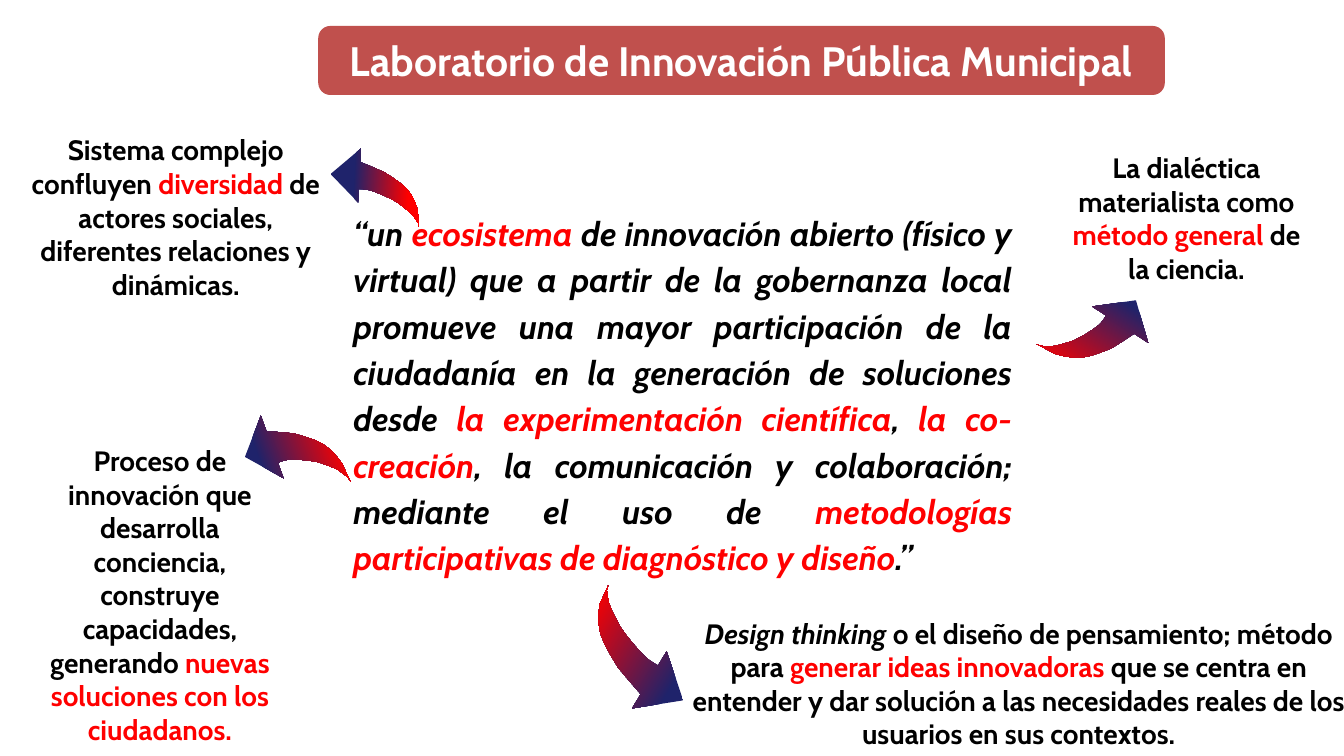
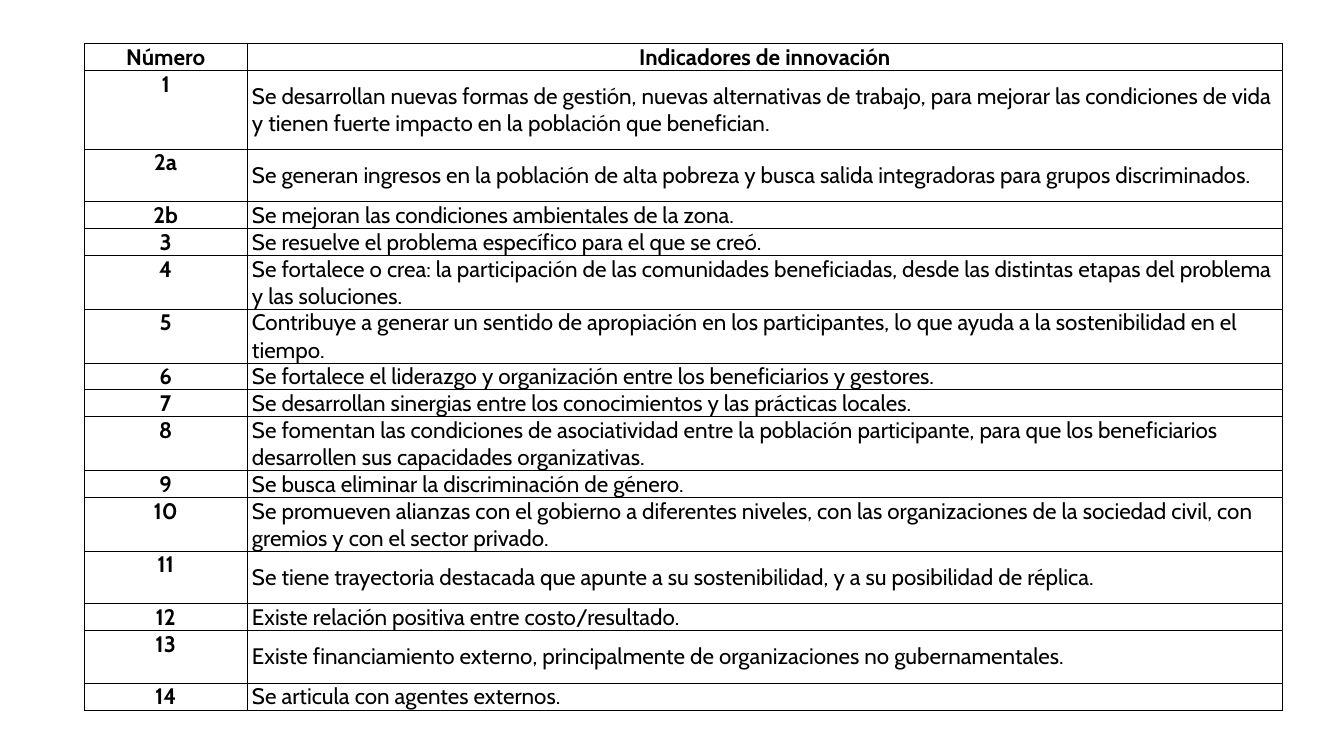
from dataclasses import dataclass

from lxml.etree import SubElement
from pptx import Presentation
from pptx.dml.color import RGBColor as RGB
from pptx.enum.shapes import MSO_SHAPE as Preset
from pptx.enum.text import MSO_ANCHOR as Anchor, MSO_AUTO_SIZE as Fit, PP_ALIGN as Align
from pptx.oxml.ns import qn
from pptx.util import Inches, Pt

COLUMNS, ROWS = 20, 11.25


@dataclass(frozen=True)
class Theme:
    font: str = "Cabin"
    ink: str = "000000"
    accent: str = "FF0000"
    paper: str = "FFFFFF"
    banner: str = "C0504D"
    arrow_head: str = "1F236B"
    title_size: int = 44
    quote_size: int = 36
    note_size: int = 30
    table_size: int = 24


@dataclass(frozen=True)
class Words:
    """A stretch of text with one style."""
    text: str
    accent: bool = False
    italic: bool = False


# Outline of the curved arrow in percent of its box: tail at the top left, tip at the right
SWOOSH = [
    (0, 0), (1, 11), (2, 22), (5, 31), (9, 40), (15, 49), (22, 56), (31, 63), (41, 70), (54, 76),
    (68, 82), (68, 100), (100, 64), (68, 28), (68, 46),
    (61, 46), (55, 45), (47, 42), (40, 39), (32, 35), (25, 31), (19, 26), (13, 21), (8, 16),
    (4, 10), (1, 5),
]


class Deck:
    """Holds the style and the current slide; boxes are (column, row, columns, rows)."""

    def __init__(self, theme):
        self.theme = theme
        self.show = Presentation()
        self.show.slide_width, self.show.slide_height = Inches(20), Inches(11.25)
        self.column = self.show.slide_width / COLUMNS
        self.row = self.show.slide_height / ROWS
        self.slide = None

    def new_slide(self):
        self.slide = self.show.slides.add_slide(self.show.slide_layouts[6])
        backdrop = self.slide.background.fill
        backdrop.solid()
        backdrop.fore_color.rgb = RGB.from_string(self.theme.paper)

    def place(self, box):
        left, top, width, height = box
        return (round(left * self.column), round(top * self.row),
                round(width * self.column), round(height * self.row))

    def add_words(self, frame, words, size, align, color=None, bold=True, italic=False):
        paragraph = frame.paragraphs[0]
        paragraph.alignment = align
        for part in words:
            run = paragraph.add_run()
            run.text = part.text
            font = run.font
            font.name, font.size, font.bold = self.theme.font, Pt(size), bold
            font.italic = italic or part.italic
            plain = color or self.theme.ink
            font.color.rgb = RGB.from_string(self.theme.accent if part.accent else plain)
        return paragraph

    def banner(self, box, title):
        band = self.slide.shapes.add_shape(Preset.ROUNDED_RECTANGLE, *self.place(box))
        band.shadow.inherit = False
        band.fill.solid()
        band.fill.fore_color.rgb = band.line.color.rgb = RGB.from_string(self.theme.banner)
        band.line.width = Pt(2)
        band.text_frame.word_wrap = True
        band.text_frame.vertical_anchor = Anchor.MIDDLE
        self.add_words(band.text_frame, [Words(title)], self.theme.title_size,
                       Align.CENTER, self.theme.paper)

    def text(self, box, words, size, align=Align.CENTER, italic=False):
        frame = self.slide.shapes.add_textbox(*self.place(box)).text_frame
        frame.word_wrap = True
        frame.auto_size = Fit.SHAPE_TO_FIT_TEXT
        return self.add_words(frame, words, size, align, italic=italic)

    def note(self, box, words):
        self.text(box, words, self.theme.note_size)

    def quote(self, box, words):
        paragraph = self.text(box, words, self.theme.quote_size, Align.JUSTIFY, italic=True)
        paragraph.line_spacing, paragraph.space_after = 1.15, Pt(9)

    def swoosh(self, box, turn):
        left, top, width, height = self.place(box)
        pen = self.slide.shapes.build_freeform(*SWOOSH[0], scale=(width / 100, height / 100))
        pen.add_line_segments(SWOOSH[1:], close=True)
        arrow = pen.convert_to_shape(left, top)
        arrow.rotation = turn
        arrow.shadow.inherit = False
        arrow.line.fill.background()
        arrow.fill.gradient()
        arrow.fill.gradient_angle = 180
        blend = ((0.28, self.theme.arrow_head), (0.84, self.theme.accent))
        for stop, (position, color) in zip(arrow.fill.gradient_stops, blend):
            stop.position, stop.color.rgb = position, RGB.from_string(color)

    def border(self, cell):
        properties = cell._tc.get_or_add_tcPr()
        for side in ("lnL", "lnR", "lnT", "lnB"):
            edge = SubElement(properties, qn(f"a:{side}"), w=str(Pt(1)))
            paint = SubElement(edge, qn("a:solidFill"))
            SubElement(paint, qn("a:srgbClr"), val=self.theme.ink)

    def cell(self, cell, text, align, bold, anchor):
        cell.margin_left = cell.margin_right = Inches(0.07)
        cell.margin_top = cell.margin_bottom = 0
        cell.vertical_anchor = anchor
        self.border(cell)
        cell.fill.background()
        self.add_words(cell.text_frame, [Words(text)], self.theme.table_size, align, bold=bold)

    def table(self, corner, widths, heights, header, records):
        box = (*corner, sum(widths), sum(heights))
        grid = self.slide.shapes.add_table(len(heights), len(widths), *self.place(box)).table
        grid.first_row = grid.horz_banding = False
        for column, width in zip(grid.columns, widths):
            column.width = round(width * self.column)
        for line, height in zip(grid.rows, heights):
            line.height = round(height * self.row)
        for index, heading in enumerate(header):
            self.cell(grid.cell(0, index), heading, Align.CENTER, True, Anchor.TOP)
        for index, (number, indicator) in enumerate(records, start=1):
            self.cell(grid.cell(index, 0), number, Align.CENTER, True, Anchor.TOP)
            self.cell(grid.cell(index, 1), indicator, Align.LEFT, False, Anchor.MIDDLE)


# Number, height in text lines, indicator
INDICATORS = [
    ("1", 3, "Se desarrollan nuevas formas de gestión, nuevas alternativas de trabajo, para mejorar "
             "las condiciones de vida y tienen fuerte impacto en la población que benefician."),
    ("2a", 2, "Se generan ingresos en la población de alta pobreza y busca salida integradoras "
              "para grupos discriminados."),
    ("2b", 1, "Se mejoran las condiciones ambientales de la zona."),
    ("3", 1, "Se resuelve el problema específico para el que se creó."),
    ("4", 2, "Se fortalece o crea: la participación de las comunidades beneficiadas, desde las "
             "distintas etapas del problema y las soluciones."),
    ("5", 2, "Contribuye a generar un sentido de apropiación en los participantes, lo que ayuda "
             "a la sostenibilidad en el tiempo."),
    ("6", 1, "Se fortalece el liderazgo y organización entre los beneficiarios y gestores."),
    ("7", 1, "Se desarrollan sinergias entre los conocimientos y las prácticas locales."),
    ("8", 2, "Se fomentan las condiciones de asociatividad entre la población participante, para "
             "que los beneficiarios desarrollen sus capacidades organizativas."),
    ("9", 1, "Se busca eliminar la discriminación de género."),
    ("10", 2, "Se promueven alianzas con el gobierno a diferentes niveles, con las organizaciones "
              "de la sociedad civil, con gremios y con el sector privado."),
    ("11", 2, "Se tiene trayectoria destacada que apunte a su sostenibilidad, y a su posibilidad "
              "de réplica."),
    ("12", 1, "Existe relación positiva entre costo/resultado."),
    ("13", 2, "Existe financiamiento externo, principalmente de organizaciones no "
              "gubernamentales."),
    ("14", 1, "Se articula con agentes externos."),
]


def laboratory(deck):
    deck.new_slide()

    # Definition in the middle
    deck.quote((5.16, 3.03, 10, 5.67), [
        Words("“un "),
        Words("ecosistema ", accent=True),
        Words("de innovación abierto (físico y virtual) que a partir de la gobernanza local "
              "promueve una mayor participación de la ciudadanía en la generación de soluciones "
              "desde "),
        Words("la experimentación científica", accent=True),
        Words(", "),
        Words("la co-creación", accent=True),
        Words(", la comunicación y colaboración; mediante el uso de "),
        Words("metodologías participativas de diagnóstico y diseño", accent=True),
        Words(".”"),
    ])

    # Explanations around it
    deck.note((0.34, 1.93, 4.55, 2.63), [
        Words("Sistema complejo confluyen "),
        Words("diversidad", accent=True),
        Words(" de actores sociales, diferentes relaciones y dinámicas."),
    ])
    deck.note((15.7, 2.19, 3.91, 2.12), [
        Words("La dialéctica materialista como "),
        Words("método general ", accent=True),
        Words("de la ciencia."),
    ])
    deck.note((0.47, 6.55, 3.82, 4.64), [
        Words("Proceso de innovación que desarrolla conciencia, construye capacidades, "
              "generando "),
        Words("nuevas soluciones con los ciudadanos.", accent=True),
    ])
    deck.note((10.16, 9.12, 10, 2.12), [
        Words("Design thinking ", italic=True),
        Words("o el diseño de pensamiento; método para "),
        Words("generar ideas innovadoras ", accent=True),
        Words("que se centra en entender y dar solución a las necesidades reales de los usuarios "
              "en sus contextos."),
    ])

    # Arrows from the definition to the explanations
    for box, turn in (
        ((8.56, 9.09, 1.84, 1.38), 31.2),
        ((3.67, 6.06, 1.35, 1.38), 160),
        ((4.91, 2.22, 1.35, 1.12), 182.9),
        ((15.7, 4.24, 1.35, 1.38), 302.9),
    ):
        deck.swoosh(box, turn)

    deck.banner((4.75, 0.4, 12.57, 1), "Laboratorio de Innovación Pública Municipal")


def indicators(deck):
    deck.new_slide()
    line = 0.39
    heights = [0.26] + [lines * line for _, lines, _ in INDICATORS]
    records = [(number, indicator) for number, _, indicator in INDICATORS]
    deck.table((1.25, 0.65), (2.43, 15.4), heights,
               ("Número", "Indicadores de innovación"), records)


def main():
    deck = Deck(Theme())
    laboratory(deck)
    indicators(deck)
    deck.show.save("out.pptx")


if __name__ == "__main__":
    main()
